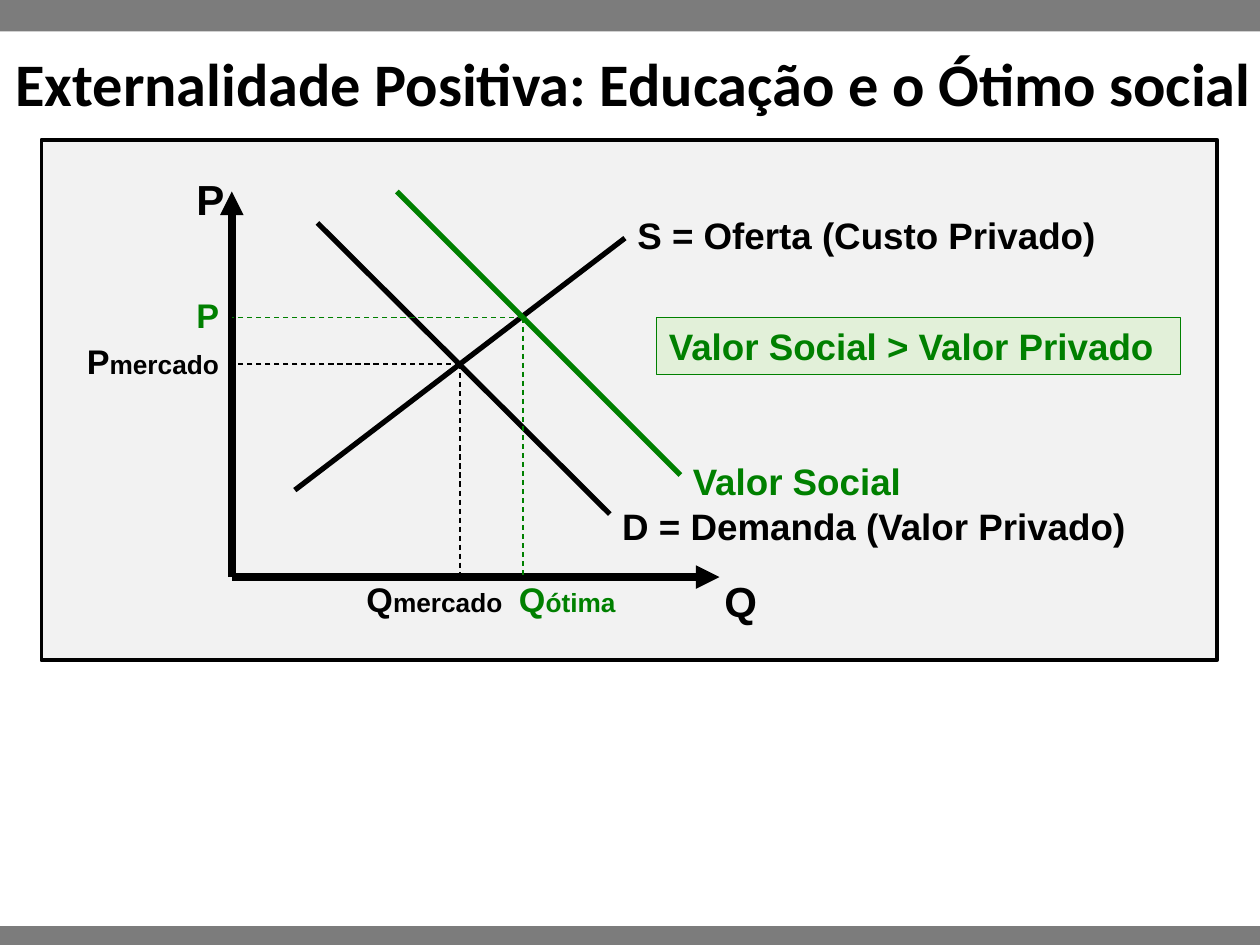
"""Draw the supply and demand slide on a grid of 100 columns by 75 rows."""
from typing import Any, NamedTuple

from lxml.etree import SubElement as sub
from pptx import Presentation as Deck
from pptx.dml.color import RGBColor as Rgb
from pptx.enum.dml import MSO_LINE as Dash
from pptx.enum.shapes import MSO_CONNECTOR as Link, MSO_SHAPE as Form
from pptx.enum.text import MSO_ANCHOR as Anchor, MSO_AUTO_SIZE as Fit, PP_ALIGN as Align
from pptx.oxml.ns import qn
from pptx.util import Inches, Pt

BLACK, GREEN, GRAY = "000000", "008000", "7C7C7C"
PALE, MINT = "F2F2F2", "E2F0D9"
COLS, ROWS = 100, 75
AXIS, BASE = 18.4, 45.8


class Box(NamedTuple):
    x: float
    y: float
    w: float
    h: float


class Label(NamedTuple):
    box: Box
    text: str
    size: float
    hue: str = BLACK
    tail: str = ""


class Stroke(NamedTuple):
    x1: float
    y1: float
    x2: float
    y2: float
    width: float = 3
    hue: str = BLACK
    dash: bool = False
    arrow: bool = False


class Point(NamedTuple):
    x: float
    y: float
    hue: str


BARS = [Box(0, 73.5, 100, 1.5), Box(0, 0, 100, 2.5)]
FRAME = Box(3.3, 11.1, 93.3, 41.3)
TITLE = Label(Box(-2, 2.1, 104.5, 8.8),
              "Externalidade Positiva: Educação e o Ótimo social", 34.5)
NOTE = Label(Box(52.1, 25.2, 41.6, 4.5), "Valor Social > Valor Privado", 21, GREEN)
LINES = [
    Stroke(AXIS, BASE, AXIS, 15.2, 4.5, arrow=True),
    Stroke(AXIS, BASE, 57.1, BASE, 4.5, arrow=True),
    Stroke(25.2, 17.7, 48.4, 40.8),
    Stroke(23.4, 38.9, 49.6, 18.9),
    Stroke(31.5, 15.2, 54, 37.7, hue=GREEN),
]
POINTS = [Point(36.5, 28.9, BLACK), Point(41.5, 25.2, GREEN)]
LABELS = [
    Label(Box(14.6, 13.3, 4.4, 5), "P", 24),
    Label(Box(56.5, 45.2, 4.4, 5), "Q", 24),
    Label(Box(49.6, 16.4, 39.8, 4.5), "S = Oferta (Custo Privado)", 21),
    Label(Box(48.4, 39.5, 42.4, 4.5), "D = Demanda (Valor Privado)", 21),
    Label(Box(54, 35.9, 19.6, 4.5), "Valor Social", 21, GREEN),
    Label(Box(28.1, 45.4, 14, 4.3), "Q", 19.5, tail="mercado"),
    Label(Box(5.9, 26.5, 13.5, 4.3), "P", 19.5, tail="mercado"),
    Label(Box(40.2, 45.4, 11.2, 4.3), "Q", 19.5, GREEN, "ótima"),
    Label(Box(14.6, 22.9, 11.2, 4.3), "P", 19.5, GREEN),
]

deck = Deck()
deck.slide_width, deck.slide_height = Inches(10), Inches(7.5)
slide = deck.slides.add_slide(deck.slide_layouts[5])
shapes = slide.shapes


def rgb(hue: str) -> Rgb:
    return Rgb.from_string(hue)


def apply(item: Any, form: dict[str, Any]) -> None:
    for name, value in form.items():
        setattr(item, name, value)


def place(*spots: float) -> list[int]:
    units = deck.slide_width / COLS, deck.slide_height / ROWS
    return [round(spot * units[i % 2]) for i, spot in enumerate(spots)]


def write(shape: Any, label: Label, font: str = "Arial", align: Any = Align.LEFT,
          anchor: Any = Anchor.TOP, wrap: bool = True) -> None:
    frame = shape.text_frame
    apply(frame, {"word_wrap": wrap, "auto_size": Fit.NONE, "vertical_anchor": anchor})
    para = frame.paragraphs[0]
    para.alignment = align
    for text, size in ((label.text, label.size), (label.tail, 15)):
        if text:
            run = para.add_run()
            run.text = text
            apply(run.font, {"name": font, "size": Pt(size), "bold": True})
            run.font.color.rgb = rgb(label.hue)


def block(box: Box, fill: str, edge: str = "", width: float = 0) -> Any:
    shape = shapes.add_shape(Form.RECTANGLE, *place(*box))
    shape.shadow.inherit = False
    shape.fill.solid()
    shape.fill.fore_color.rgb = rgb(fill)
    if edge:
        shape.line.color.rgb = rgb(edge)
        shape.line.width = Pt(width)
        sub(shape.line._get_or_add_ln(), qn("a:round"))
    else:
        shape.line.fill.background()
    return shape


def draw(mark: Stroke) -> None:
    link = shapes.add_connector(Link.STRAIGHT, *place(*mark[:4]))
    link.line.color.rgb = rgb(mark.hue)
    link.line.width = Pt(mark.width)
    if mark.dash:
        link.line.dash_style = Dash.DASH
    if mark.arrow:
        sub(link.line._get_or_add_ln(), qn("a:tailEnd"), type="triangle")
    sub(link._element.spPr, qn("a:effectLst"))


def guide(point: Point) -> None:
    for x, y in ((point.x, BASE), (AXIS, point.y)):
        draw(Stroke(point.x, point.y, x, y, 0.75, point.hue, dash=True))


def main() -> None:
    for bar in BARS:
        block(bar, GRAY)
    block(FRAME, PALE, BLACK, 2.25)
    title = shapes.title
    apply(title, dict(zip(("left", "top", "width", "height"), place(*TITLE.box))))
    write(title, TITLE, "Calibri", Align.CENTER, Anchor.MIDDLE)
    for mark in LINES:
        draw(mark)
    for point in POINTS:
        guide(point)
    for label in LABELS:
        write(shapes.add_textbox(*place(*label.box)), label, wrap=len(label.text) > 1)
    write(block(NOTE.box, MINT, GREEN, 0.75), NOTE)
    deck.save("out.pptx")


if __name__ == "__main__":
    main()
